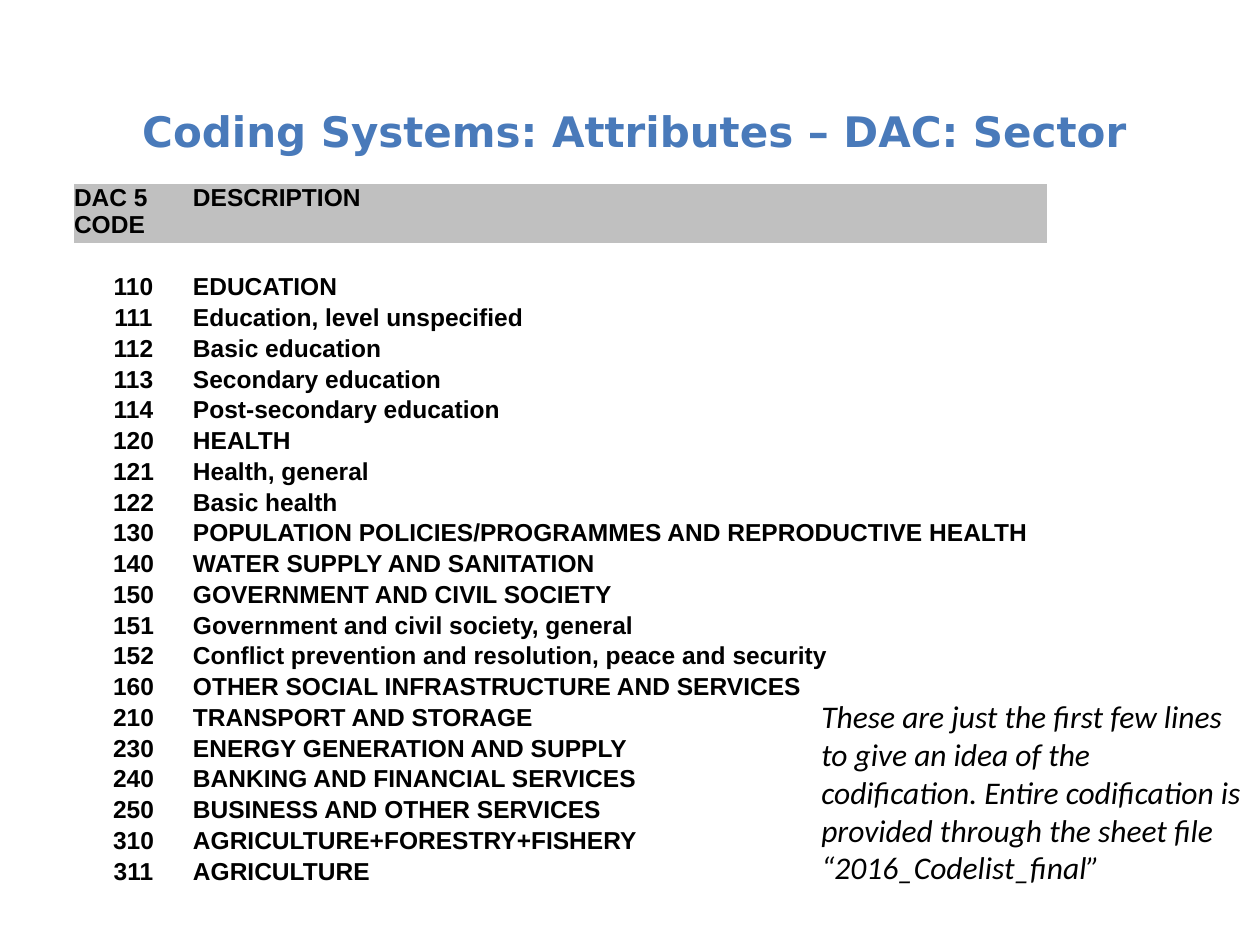
from pptx import Presentation, util as u
from pptx.dml.color import RGBColor
from pptx.enum import text as t

PX = u.Inches(1) / 126
BLUE = RGBColor(0x49, 0x7A, 0xBA)
BLACK = RGBColor(0, 0, 0)
GREY = RGBColor(0xC0, 0xC0, 0xC0)
PLAIN = "{2D5ABB26-0587-4C30-8999-92F81FD0307C}"  # no style, no grid

TITLE = "Coding Systems: Attributes – DAC: Sector"
NOTE = ("These are just the first few lines to give an idea of the "
        "codification. Entire codification is provided through the "
        "sheet file “2016_Codelist_final”")
HEAD = ("DAC 5 CODE", "DESCRIPTION")
SECTORS = [
    ("110", "EDUCATION"),
    ("111", "Education, level unspecified"),
    ("112", "Basic education"),
    ("113", "Secondary education"),
    ("114", "Post-secondary education"),
    ("120", "HEALTH"),
    ("121", "Health, general"),
    ("122", "Basic health"),
    ("130", "POPULATION POLICIES/PROGRAMMES AND REPRODUCTIVE HEALTH"),
    ("140", "WATER SUPPLY AND SANITATION"),
    ("150", "GOVERNMENT AND CIVIL SOCIETY"),
    ("151", "Government and civil society, general"),
    ("152", "Conflict prevention and resolution, peace and security"),
    ("160", "OTHER SOCIAL INFRASTRUCTURE AND SERVICES"),
    ("210", "TRANSPORT AND STORAGE"),
    ("230", "ENERGY GENERATION AND SUPPLY"),
    ("240", "BANKING AND FINANCIAL SERVICES"),
    ("250", "BUSINESS AND OTHER SERVICES"),
    ("310", "AGRICULTURE+FORESTRY+FISHERY"),
    ("311", "AGRICULTURE"),
]
ROWS = [HEAD, ("", "")] + SECTORS

TITLE_FONT = dict(name="DejaVu Sans", size=u.Pt(24), bold=True)
CELL_FONT = dict(name="Arial", size=u.Pt(14), bold=True)
NOTE_FONT = dict(name="Calibri", size=u.Pt(18), italic=True)

TABLE_BOX = (74, 184, 973, 704)
COLS = (119, 854)
HEAD_H = 58


def px(n):
    return u.Emu(round(n * PX))


def write(par, words, font, color=BLACK, align=None):
    par.alignment = align
    run = par.add_run()
    run.text = words
    for key, val in font.items():
        setattr(run.font, key, val)
    run.font.color.rgb = color


def add_box(slide, box):
    frame = slide.shapes.add_textbox(*map(px, box)).text_frame
    frame.word_wrap = True
    return frame


def add_codes(slide):
    table = slide.shapes.add_table(
        len(ROWS), len(COLS), *map(px, TABLE_BOX)).table
    table._tbl.tblPr.find("{*}tableStyleId").text = PLAIN
    table.first_row = table.horz_banding = False
    for col, wide in zip(table.columns, COLS):
        col.width = px(wide)
    row_h = (TABLE_BOX[3] - HEAD_H) / (len(ROWS) - 1)
    aligns = (t.PP_ALIGN.CENTER, t.PP_ALIGN.JUSTIFY)
    for r, row in enumerate(ROWS):
        table.rows[r].height = px(row_h if r else HEAD_H)
        for c, words in enumerate(row):
            cell = table.cell(r, c)
            for side in ("left", "top", "right", "bottom"):
                setattr(cell, "margin_" + side, 0)
            if r:
                cell.fill.background()
            else:
                cell.fill.solid()
                cell.fill.fore_color.rgb = GREY
            par = cell.text_frame.paragraphs[0]
            if words:
                write(par, words, CELL_FONT, align=aligns[c] if r else None)
            else:  # keeps the empty row from growing
                par._p.get_or_add_endParaRPr().set("sz", "1400")


def main():
    deck = Presentation()
    deck.slide_width, deck.slide_height = px(1260), px(945)
    slide = deck.slides.add_slide(deck.slide_layouts[6])

    title = add_box(slide, (44, 96, 1181, 118))
    title.vertical_anchor = t.MSO_ANCHOR.MIDDLE
    title.margin_bottom = px(55)
    write(title.paragraphs[0], TITLE, TITLE_FONT, BLUE, t.PP_ALIGN.CENTER)

    add_codes(slide)

    note = add_box(slide, (809, 691, 456, 204))
    note.auto_size = t.MSO_AUTO_SIZE.SHAPE_TO_FIT_TEXT
    write(note.paragraphs[0], NOTE, NOTE_FONT)
    deck.save("out.pptx")


if __name__ == "__main__":
    main()
